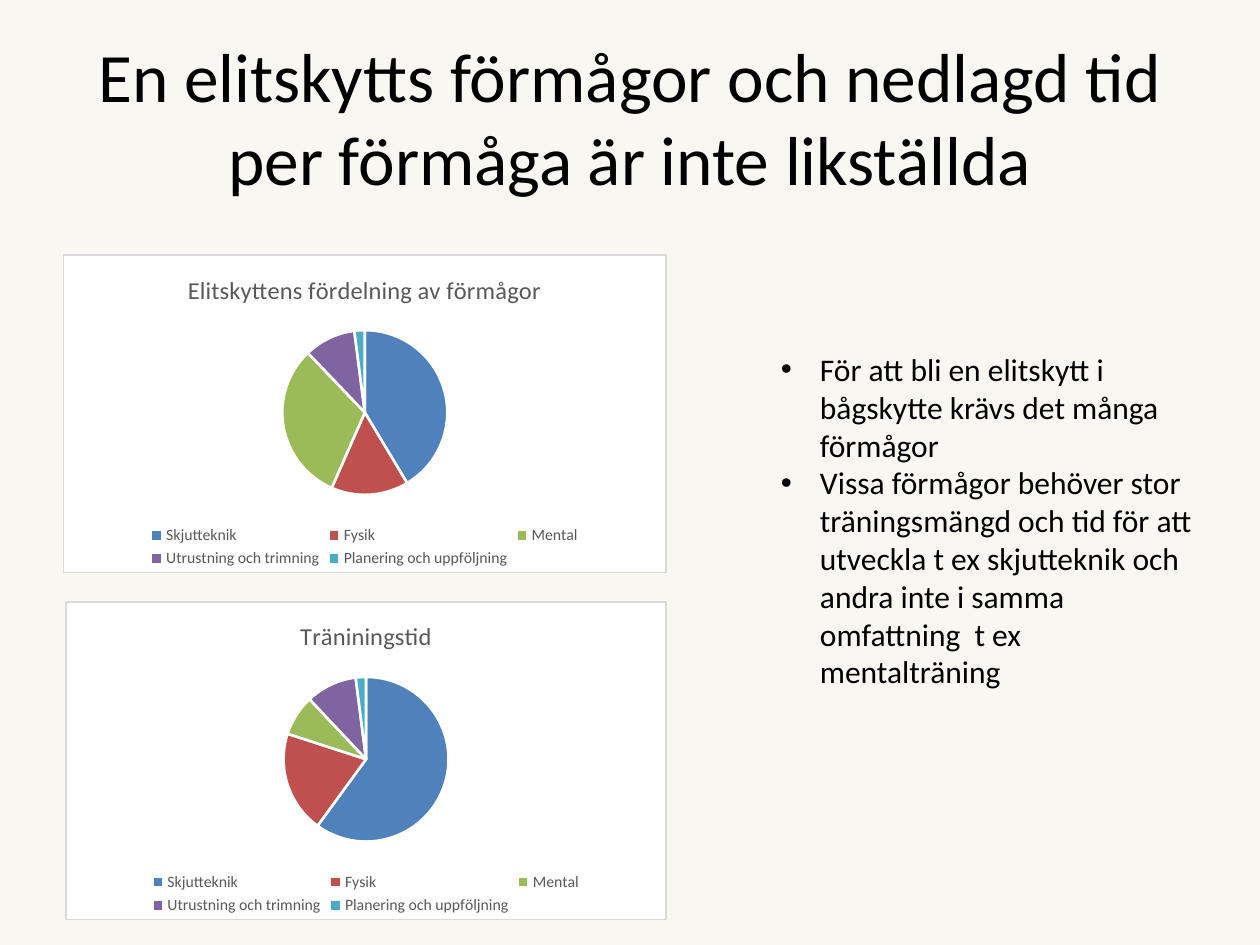
from dataclasses import dataclass

import pptx
import pptx.chart.data
import pptx.dml.color
import pptx.enum.chart
import pptx.enum.text
import pptx.oxml
import pptx.oxml.ns
import pptx.util
from pptx.util import Cm, Pt

FONT = "Calibri"
BLACK, GREY, WHITE = "000000", "595959", "FFFFFF"
ABILITIES = {
    "Skjutteknik": "4F81BD",
    "Fysik": "C0504D",
    "Mental": "9BBB59",
    "Utrustning och trimning": "8064A2",
    "Planering och uppföljning": "4BACC6",
}
REQUIREMENTS = [
    "För att bli en elitskytt i bågskytte krävs det många förmågor",
    "Vissa förmågor behöver stor träningsmängd och tid för att utveckla t ex "
    "skjutteknik och andra inte i samma omfattning  t ex mentalträning",
]


@dataclass
class Box:
    left: float
    top: float
    width: float
    height: float

    def lengths(self) -> list:
        return [Cm(n) for n in (self.left, self.top, self.width, self.height)]


@dataclass
class Distribution:
    title: str
    box: Box
    shares: tuple


DISTRIBUTIONS = [
    Distribution("Elitskyttens fördelning av förmågor",
                 Box(1.27, 5.13, 12.17, 6.43), (41, 15, 31, 10, 2)),
    Distribution("Träniningstid",
                 Box(1.32, 12.12, 12.12, 6.43), (60, 20, 8, 10, 2)),
]


def rgb(value: str) -> pptx.dml.color.RGBColor:
    return pptx.dml.color.RGBColor.from_string(value)


def style_font(font, size: float, color: str) -> None:
    font.name = FONT
    font.size = Pt(size)
    font.bold = False
    font.color.rgb = rgb(color)


def add_text(slide, box: Box, paragraphs: list, size: float):
    frame = slide.shapes.add_textbox(*box.lengths()).text_frame
    frame.word_wrap = True
    frame.text = "\n".join(paragraphs)
    for paragraph in frame.paragraphs:
        style_font(paragraph.runs[0].font, size, BLACK)
    return frame


def add_bullet(paragraph) -> None:
    properties = paragraph._p.get_or_add_pPr()
    indent = Cm(0.79)
    properties.set("marL", str(indent))
    properties.set("indent", str(-indent))
    namespace = pptx.oxml.ns.nsdecls("a")
    for xml in (f'<a:buFont {namespace} typeface="Arial"/>',
                f'<a:buChar {namespace} char="•"/>'):
        properties.append(pptx.oxml.parse_xml(xml))


def frame_chart(chart) -> None:
    """Give the chart area square corners, a white fill and a thin grey border."""
    chart_area = chart._chartSpace.find(pptx.oxml.ns.qn("c:chart"))
    namespaces = pptx.oxml.ns.nsdecls("c", "a")
    chart_area.addprevious(pptx.oxml.parse_xml(
        f'<c:roundedCorners {namespaces} val="0"/>'))
    chart_area.addnext(pptx.oxml.parse_xml(
        f'<c:spPr {namespaces}>'
        f'<a:solidFill><a:srgbClr val="{WHITE}"/></a:solidFill>'
        f'<a:ln w="{Pt(0.75)}"><a:solidFill><a:srgbClr val="D9D9D9"/>'
        '</a:solidFill></a:ln></c:spPr>'))


def add_distribution(slide, distribution: Distribution) -> None:
    data = pptx.chart.data.CategoryChartData()
    data.categories = list(ABILITIES)
    data.add_series("Series 1", distribution.shares)
    chart = slide.shapes.add_chart(
        pptx.enum.chart.XL_CHART_TYPE.PIE, *distribution.box.lengths(), data).chart
    style_font(chart.font, 10, BLACK)
    frame_chart(chart)

    chart.has_title = True
    heading = chart.chart_title.text_frame
    heading.text = distribution.title
    style_font(heading.paragraphs[0].runs[0].font, 14, GREY)
    chart.chart_title.include_in_layout = False

    chart.has_legend = True
    chart.legend.position = pptx.enum.chart.XL_LEGEND_POSITION.BOTTOM
    chart.legend.include_in_layout = False
    style_font(chart.legend.font, 9, GREY)

    pie = chart.plots[0]
    pie.vary_by_categories = True
    for index, color in enumerate(ABILITIES.values()):
        slice_format = pie.series[0].points[index].format
        slice_format.fill.solid()
        slice_format.fill.fore_color.rgb = rgb(color)
        slice_format.line.color.rgb = rgb(WHITE)
        slice_format.line.width = Pt(1.5)


def main() -> None:
    presentation = pptx.Presentation()
    presentation.slide_width, presentation.slide_height = Cm(25.4), Cm(19.05)
    slide = presentation.slides.add_slide(presentation.slide_layouts[6])
    slide.background.fill.solid()
    slide.background.fill.fore_color.rgb = rgb("F8F7F2")

    title = add_text(
        slide, Box(1.27, 0.76, 22.86, 3.18),
        ["En elitskytts förmågor och nedlagd tid per förmåga är inte likställda"], 39.6)
    title.vertical_anchor = pptx.enum.text.MSO_ANCHOR.MIDDLE
    title.paragraphs[0].alignment = pptx.enum.text.PP_ALIGN.CENTER

    for distribution in DISTRIBUTIONS:
        add_distribution(slide, distribution)

    requirements = add_text(slide, Box(15.49, 6.93, 8.79, 7.19), REQUIREMENTS, 18)
    requirements.auto_size = pptx.enum.text.MSO_AUTO_SIZE.SHAPE_TO_FIT_TEXT
    for paragraph in requirements.paragraphs:
        add_bullet(paragraph)

    presentation.save("out.pptx")


if __name__ == "__main__":
    main()
